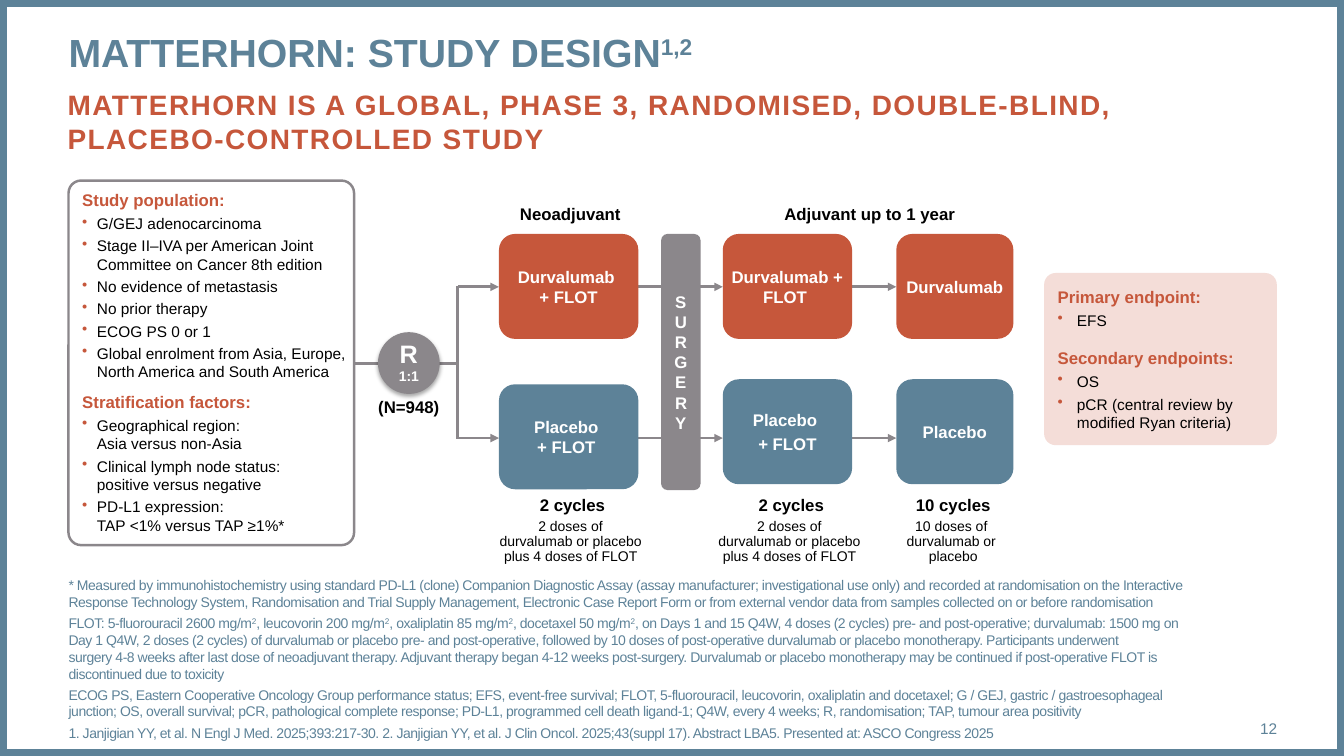
from copy import deepcopy

from lxml.etree import SubElement
from pptx import Presentation
from pptx.dml.color import RGBColor
from pptx.enum.shapes import MSO_CONNECTOR as Link, MSO_SHAPE as Preset
from pptx.enum.text import MSO_ANCHOR as Anchor, MSO_AUTO_SIZE as Fit, PP_ALIGN as Align
from pptx.oxml.ns import qn
from pptx.util import Inches, Pt

COLORS = {"blue": "5D8298", "red": "C6573B", "gray": "8B878B", "pink": "F4DDD8",
          "white": "FFFFFF", "black": "000000"}
WIDTH, HEIGHT = Inches(13.333), Inches(7.5)
COLUMNS, ROWS = 160, 90
PADDING = (1.2, 0.6, 1.2, 0.6)
NO_PADDING = (0, 0, 0, 0)
ARM_PADDING = (0.4, 0.36, 0.4, 0.36)
HEADING = dict(size=12, color="red", bold=True, bullet=0)


def col(count):
    """Return the width of a number of grid columns."""
    return int(WIDTH * count / COLUMNS)


def row(count):
    """Return the height of a number of grid rows."""
    return int(HEIGHT * count / ROWS)


def place(box):
    """Turn a grid box into slide lengths."""
    left, top, width, height = box
    return col(left), row(top), col(width), row(height)


def rgb(name):
    """Look up a named colour."""
    return RGBColor.from_string(COLORS[name])


def format_paragraph(paragraph, text, size=12, color="black", bold=False, align=Align.LEFT,
                     before=0, after=0, leading=1.0, bullet=0, tracking=0):
    """Fill one paragraph; a caret switches superscript on and off."""
    paragraph.alignment, paragraph.line_spacing = align, leading
    paragraph.space_before, paragraph.space_after = Pt(before), Pt(after)
    props = paragraph._p.get_or_add_pPr()
    props.set("marL", str(col(bullet)))
    props.set("indent", str(-col(bullet)))
    if bullet:
        SubElement(SubElement(props, qn("a:buClr")), qn("a:srgbClr")).set("val", COLORS["red"])
        SubElement(props, qn("a:buChar")).set("char", "•")
    else:
        SubElement(props, qn("a:buNone"))
    for position, piece in enumerate(text.split("^")):
        for number, line in enumerate(piece.split("\n")):
            if number:
                paragraph.add_line_break()
            run = paragraph.add_run()
            run.text = line
            run.font.name, run.font.size, run.font.bold = "Arial", Pt(size), bold
            run.font.color.rgb = rgb(color)
            run_props = run._r.get_or_add_rPr()
            if tracking:
                run_props.set("spc", str(int(tracking * 100)))
            if position % 2:
                run_props.set("baseline", "30000")
    for line_break in paragraph._p.findall(qn("a:br")):
        line_break.append(deepcopy(run_props))


def write(holder, paragraphs, anchor=Anchor.TOP, padding=NO_PADDING, **style):
    """Write strings or (string, format) pairs into a shape."""
    frame = holder.text_frame
    frame.word_wrap, frame.auto_size, frame.vertical_anchor = True, Fit.NONE, anchor
    frame.margin_left, frame.margin_right = col(padding[0]), col(padding[2])
    frame.margin_top, frame.margin_bottom = row(padding[1]), row(padding[3])
    for number, entry in enumerate(paragraphs):
        text, own = (entry, {}) if isinstance(entry, str) else entry
        paragraph = frame.add_paragraph() if number else frame.paragraphs[0]
        format_paragraph(paragraph, text, **{**style, **own})


def panel(slide, box, preset=Preset.ROUNDED_RECTANGLE, fill=None, line=None, weight=1, corner=None):
    """Add a flat preset shape."""
    shape = slide.shapes.add_shape(preset, *place(box))
    shape.shadow.inherit = False
    if corner is not None:
        shape.adjustments[0] = corner
    if fill:
        shape.fill.solid()
        shape.fill.fore_color.rgb = rgb(fill)
    else:
        shape.fill.background()
    if line:
        shape.line.color.rgb, shape.line.width = rgb(line), Pt(weight)
    else:
        shape.line.fill.background()
    return shape


def label(slide, box, paragraphs, **style):
    """Add a text box."""
    write(slide.shapes.add_textbox(*place(box)), paragraphs, **style)


def link(slide, start, end, arrow=False):
    """Join two grid points with a gray line."""
    line = slide.shapes.add_connector(Link.STRAIGHT, col(start[0]), row(start[1]), col(end[0]), row(end[1]))
    line.line.color.rgb, line.line.width = rgb("gray"), Pt(2)
    if arrow:
        SubElement(line.line._get_or_add_ln(), qn("a:tailEnd")).set("type", "triangle")
    SubElement(line._element.spPr, qn("a:effectLst"))


def fill_placeholder(holder, box, paragraphs, **style):
    """Move a placeholder and write into it."""
    holder.left, holder.top, holder.width, holder.height = place(box)
    write(holder, paragraphs, **style)


def header(slide, box):
    """Place the title above the subtitle."""
    x, y, w, h = box
    fill_placeholder(slide.shapes.title, (x, y, w, 6), ["MATTERHORN: STUDY DESIGN^1,2^"],
                     size=28, color="blue", bold=True)
    fill_placeholder(slide.placeholders[1], (x - 0.12, y + 7.1, w, h - 7.1),
                     ["MATTERHORN IS A GLOBAL, PHASE 3, RANDOMISED, DOUBLE-BLIND, PLACEBO-CONTROLLED STUDY"],
                     size=20, color="red", bold=True, tracking=1)


def population(slide, box):
    """Draw the card of study population and stratification factors."""
    criteria = ["G/GEJ adenocarcinoma",
                "Stage II–IVA per American Joint Committee on Cancer 8th edition",
                "No evidence of metastasis", "No prior therapy", "ECOG PS 0 or 1",
                "Global enrolment from Asia, Europe, North America and South America"]
    factors = ["Geographical region: \nAsia versus non-Asia",
               "Clinical lymph node status: \npositive versus negative",
               "PD-L1 expression: \nTAP <1% versus TAP ≥1%*"]
    card = panel(slide, box, fill="white", line="gray", weight=1.75, corner=0.044)
    write(card, [("Study population:", {**HEADING, "leading": 0.95}), *criteria,
                 ("Stratification factors:", {**HEADING, "leading": 0.95, "before": 6}), *factors],
          anchor=Anchor.MIDDLE, padding=(1.2, 0.6, 0.1, 0.6), size=11, after=2.7, bullet=1.75)


def randomisation(slide, box):
    """Draw the randomisation circle and its sample size."""
    x, y, w, h = box
    circle = panel(slide, box, Preset.OVAL, fill="gray")
    write(circle, [("R", {"size": 18}), "1:1"], anchor=Anchor.MIDDLE,
          size=10, color="white", bold=True, align=Align.CENTER, leading=0.9)
    shadow = SubElement(circle._element.spPr.find(qn("a:effectLst")), qn("a:outerShdw"),
                        blurRad=str(Pt(3.1)), dist=str(Pt(1.8)), dir="5400000", rotWithShape="0")
    tint = SubElement(shadow, qn("a:srgbClr"), val=COLORS["black"])
    SubElement(tint, qn("a:alpha"), val="35000")
    label(slide, (x - 2, y + h + 0.3, w + 4, 2.4), ["(N=948)"], bold=True, align=Align.CENTER)


def flow(slide, box):
    """Draw both treatment arms from randomisation to adjuvant therapy."""
    x, y, w, h = box
    fork, middle, arm_rows = x + 13.2, y + 19.6, (y + 10.5, y + 28.5)
    shared_doses = "2 doses of \ndurvalumab or placebo \nplus 4 doses of FLOT "
    stages = [
        (18.1, 16.6, 22.1, ["Durvalumab \n+ FLOT"], ["Placebo \n+ FLOT "], "2 cycles", shared_doses, 0.45),
        (44.75, 15.4, 21.5, ["Durvalumab + FLOT "], ["Placebo ", "+ FLOT"], "2 cycles", shared_doses, 0.45),
        (65.4, 13.95, 21.5, ["Durvalumab"], ["Placebo"], "10 cycles",
         "10 doses of \ndurvalumab or \nplacebo", -0.2)]
    link(slide, (x, middle), (fork, middle))
    link(slide, (fork, arm_rows[0] - 0.1), (fork, arm_rows[1] + 0.1))
    for arm_row in arm_rows:
        start = fork
        for left, width, *_ in stages:
            link(slide, (start, arm_row), (x + left, arm_row), arrow=True)
            start = x + left + width
    randomisation(slide, (x + 3.7, y + 15.9, 7.35, 7.35))
    surgery = panel(slide, (x + 37.4, y + 4.2, 4.7, 30.5), fill="gray")
    write(surgery, ["SURGERY"], anchor=Anchor.MIDDLE, color="white", bold=True, align=Align.CENTER)
    surgery.text_frame._txBody.bodyPr.set("vert", "wordArtVert")
    for left, width, placebo_top, durvalumab, placebo, cycles, doses, shift in stages:
        for top, treatment, fill in ((4.2, durvalumab, "red"), (placebo_top, placebo, "blue")):
            arm = panel(slide, (x + left, y + top, width, 12.5), fill=fill, corner=0.154)
            write(arm, treatment, anchor=Anchor.MIDDLE, padding=ARM_PADDING,
                  color="white", bold=True, align=Align.CENTER, after=2.7)
        caption = x + left + width / 2 + shift - 10.5
        label(slide, (caption, y + 34.6, 21, 3.6), [cycles], padding=PADDING, bold=True, align=Align.CENTER)
        label(slide, (caption, y + 37.6, 21, h - 37.6), [doses], padding=PADDING,
              size=10, align=Align.CENTER, leading=0.9)
    for left, width, phase in ((18.3, 16.6, "Neoadjuvant"), (44.95, w - 44.75, "Adjuvant up to 1 year")):
        label(slide, (x + left, y, width, 3.6), [phase], padding=PADDING, bold=True, align=Align.CENTER)


def endpoints(slide, box):
    """Draw the card of primary and secondary endpoints."""
    card = panel(slide, box, fill="pink", corner=0.067)
    write(card, [("Primary endpoint:", HEADING), "EFS",
                 ("Secondary endpoints:", {**HEADING, "before": 10}), "OS",
                 "pCR (central review by \nmodified Ryan criteria)"],
          anchor=Anchor.MIDDLE, padding=PADDING, size=11, after=3, bullet=2.3)


def footer(slide, box):
    """Place the footnotes and the page number."""
    x, y, w, h = box
    notes = [
        "* Measured by immunohistochemistry using standard PD-L1 (clone) Companion Diagnostic Assay (assay manufacturer; investigational use only) and recorded at randomisation on the Interactive Response Technology System, Randomisation and Trial Supply Management, Electronic Case Report Form or from external vendor data from samples collected on or before randomisation",
        "FLOT: 5-fluorouracil 2600 mg/m^2^, leucovorin 200 mg/m^2^, oxaliplatin 85 mg/m^2^, docetaxel 50 mg/m^2^, on Days 1 and 15 Q4W, 4 doses (2 cycles) pre- and post-operative; durvalumab: 1500 mg on \nDay 1 Q4W, 2 doses (2 cycles) of durvalumab or placebo pre- and post-operative, followed by 10 doses of post-operative durvalumab or placebo monotherapy. Participants underwent \nsurgery 4-8 weeks after last dose of neoadjuvant therapy. Adjuvant therapy began 4-12 weeks post-surgery. Durvalumab or placebo monotherapy may be continued if post-operative FLOT is discontinued due to toxicity",
        "ECOG PS, Eastern Cooperative Oncology Group performance status; EFS, event-free survival; FLOT, 5-fluorouracil, leucovorin, oxaliplatin and docetaxel; G / GEJ, gastric / gastroesophageal junction; OS, overall survival; pCR, pathological complete response; PD-L1, programmed cell death ligand-1; Q4W, every 4 weeks; R, randomisation; TAP, tumour area positivity",
        "1. Janjigian YY, et al. N Engl J Med. 2025;393:217-30. 2. Janjigian YY, et al. J Clin Oncol. 2025;43(suppl 17). Abstract LBA5. Presented at: ASCO Congress 2025"]
    spaced = [notes[0], *((note, {"before": 3}) for note in notes[1:])]
    fill_placeholder(slide.placeholders[2], (x, y, w - 7.8, h - 0.9), spaced,
                     anchor=Anchor.BOTTOM, size=10, color="blue", tracking=-0.3)
    label(slide, (x + w - 10.3, y + h - 4.8, 10.3, 4.8), ["12"], anchor=Anchor.MIDDLE,
          size=11, color="blue", align=Align.RIGHT)


def main():
    """Build the study design slide."""
    deck = Presentation()
    deck.slide_width, deck.slide_height = WIDTH, HEIGHT
    slide = deck.slides.add_slide(deck.slide_layouts[3])
    panel(slide, (0, 0, COLUMNS, ROWS), Preset.RECTANGLE, line="blue", weight=10)
    header(slide, (8.16, 3.36, 143.9, 16.3))
    flow(slide, (41.3, 23.65, 79.35, 44.4))
    population(slide, (8.16, 21.5, 34, 43.4))
    endpoints(slide, (124.3, 32.5, 27.7, 20.5))
    footer(slide, (8.16, 68, 143.9, 21.1))
    deck.save("out.pptx")


if __name__ == "__main__":
    main()
